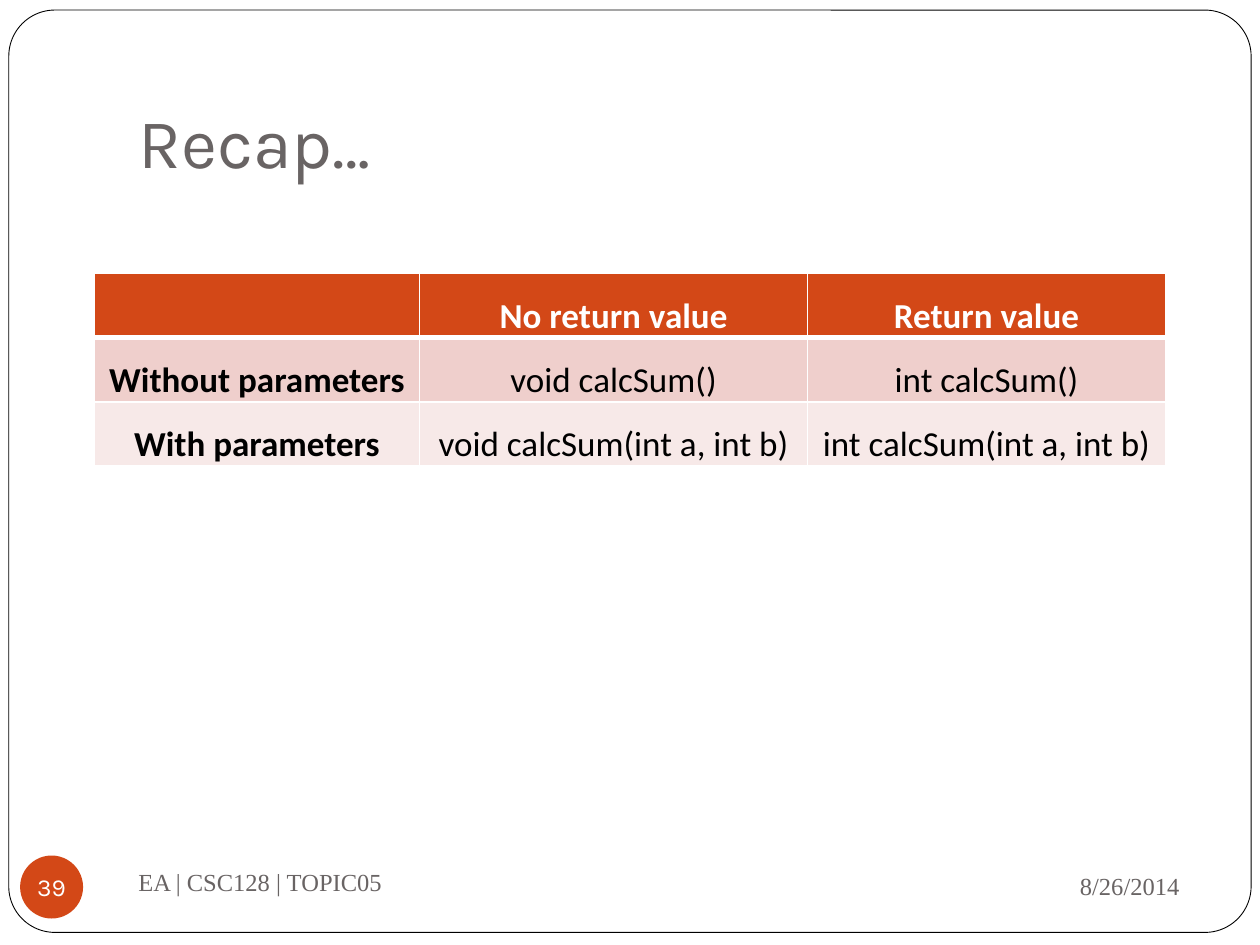
"""Build the recap slide comparing function signatures."""
from lxml import etree
from pptx import Presentation, util as u
from pptx.dml.color import RGBColor
from pptx.enum import shapes, text
from pptx.oxml.ns import qn

COLORS = {
    "white": "FFFFFF",
    "black": "000000",
    "gray": "696464",
    "accent": "D34817",
    "band_dark": "EFCFCC",
    "band_light": "F7E9E8",
}
ROWS = [
    ("", "No return value", "Return value"),
    ("Without parameters", "void calcSum()", "int calcSum()"),
    ("With parameters", "void calcSum(int a, int b)", "int calcSum(int a, int b)"),
]
ROW_FILLS = ("accent", "band_dark", "band_light")
COL_WIDTHS = (2.58, 3.08, 2.84)
ROW_HEIGHT = 0.51


def rgb(name):
    return RGBColor.from_string(COLORS[name])


def box(values):
    return [u.Inches(v) for v in values]


def style(p, font, size, color, align=text.PP_ALIGN.LEFT, bold=False):
    p.alignment = align
    p.font.name = font
    p.font.size = u.Pt(size)
    p.font.bold = bold
    p.font.color.rgb = rgb(color)


def set_insets(item, left, top, right, bottom):
    item.margin_left, item.margin_top, item.margin_right, item.margin_bottom = box(
        (left, top, right, bottom))


def add_shape(s, kind, at, fill, line=None):
    sp = s.shapes.add_shape(kind, *box(at))
    sp.shadow.inherit = False
    sp.fill.solid()
    sp.fill.fore_color.rgb = rgb(fill)
    if line:
        sp.line.color.rgb = rgb(line)
        sp.line.width = u.Pt(0.5)
    else:
        sp.line.fill.background()
    return sp


def add_text(s, at, words, font, size, align=text.PP_ALIGN.LEFT,
             anchor=text.MSO_ANCHOR.MIDDLE, bottom=0.05):
    tf = s.shapes.add_textbox(*box(at)).text_frame
    tf.word_wrap = True
    tf.vertical_anchor = anchor
    set_insets(tf, 0.1, 0.05, 0.1, bottom)
    tf.text = words
    style(tf.paragraphs[0], font, size, "gray", align)


def add_badge(s, at, words):
    tf = add_shape(s, shapes.MSO_SHAPE.OVAL, at, "accent").text_frame
    tf.word_wrap = False
    tf.vertical_anchor = text.MSO_ANCHOR.MIDDLE
    set_insets(tf, 0, 0, 0, 0)
    tf.text = words
    style(tf.paragraphs[0], "Karla", 14, "white", text.PP_ALIGN.CENTER)


def set_borders(cell, widths):
    tc_pr = cell._tc.get_or_add_tcPr()
    for i, (side, width) in enumerate(zip("LRTB", widths)):
        ln = etree.Element(qn(f"a:ln{side}"), w=str(u.Pt(width)))
        fill = etree.SubElement(ln, qn("a:solidFill"))
        etree.SubElement(fill, qn("a:srgbClr"), val=COLORS["white"])
        tc_pr.insert(i, ln)


def fill_cell(cell, words, row, col):
    cell.fill.solid()
    cell.fill.fore_color.rgb = rgb(ROW_FILLS[row])
    set_borders(cell, (1, 1, 3 if row == 1 else 1, 3 if row == 0 else 1))
    if words:
        set_insets(cell, 0.07, 0, 0.07, 0)
        cell.text = words
        p = cell.text_frame.paragraphs[0]
        p.line_spacing = 1.5
        style(p, "Calibri", 20, "black" if row else "white",
              text.PP_ALIGN.CENTER, bold=row == 0 or col == 0)


def add_signature_table(s, left, top):
    at = (left, top, sum(COL_WIDTHS), ROW_HEIGHT * len(ROWS))
    table = s.shapes.add_table(len(ROWS), len(COL_WIDTHS), *box(at)).table
    for column, width in zip(table.columns, COL_WIDTHS):
        column.width = u.Inches(width)
    for r, words in enumerate(ROWS):
        table.rows[r].height = u.Inches(ROW_HEIGHT)
        for c, word in enumerate(words):
            fill_cell(table.cell(r, c), word, r, c)


def main():
    prs = Presentation()
    prs.slide_width, prs.slide_height = box((10, 7.5))
    s = prs.slides.add_slide(prs.slide_layouts[6])
    frame = add_shape(s, shapes.MSO_SHAPE.ROUNDED_RECTANGLE,
                      (0.07, 0.08, 9.86, 7.32), "white", "black")
    frame.adjustments[0] = 0.05
    add_text(s, (1, 0.3, 8.5, 1.25), "Recap…", "Karla", 40,
             anchor=text.MSO_ANCHOR.BOTTOM, bottom=0.1)
    add_text(s, (6.75, 6.77, 2.71, 0.52), "8/26/2014", "Times New Roman", 14,
             text.PP_ALIGN.RIGHT)
    add_text(s, (1, 6.75, 4.33, 0.5), "EA | CSC128 | TOPIC05", "Times New Roman", 14)
    add_badge(s, (0.16, 6.79, 0.5, 0.5), "39")
    add_signature_table(s, 0.75, 2.17)
    prs.save("out.pptx")


if __name__ == "__main__":
    main()
